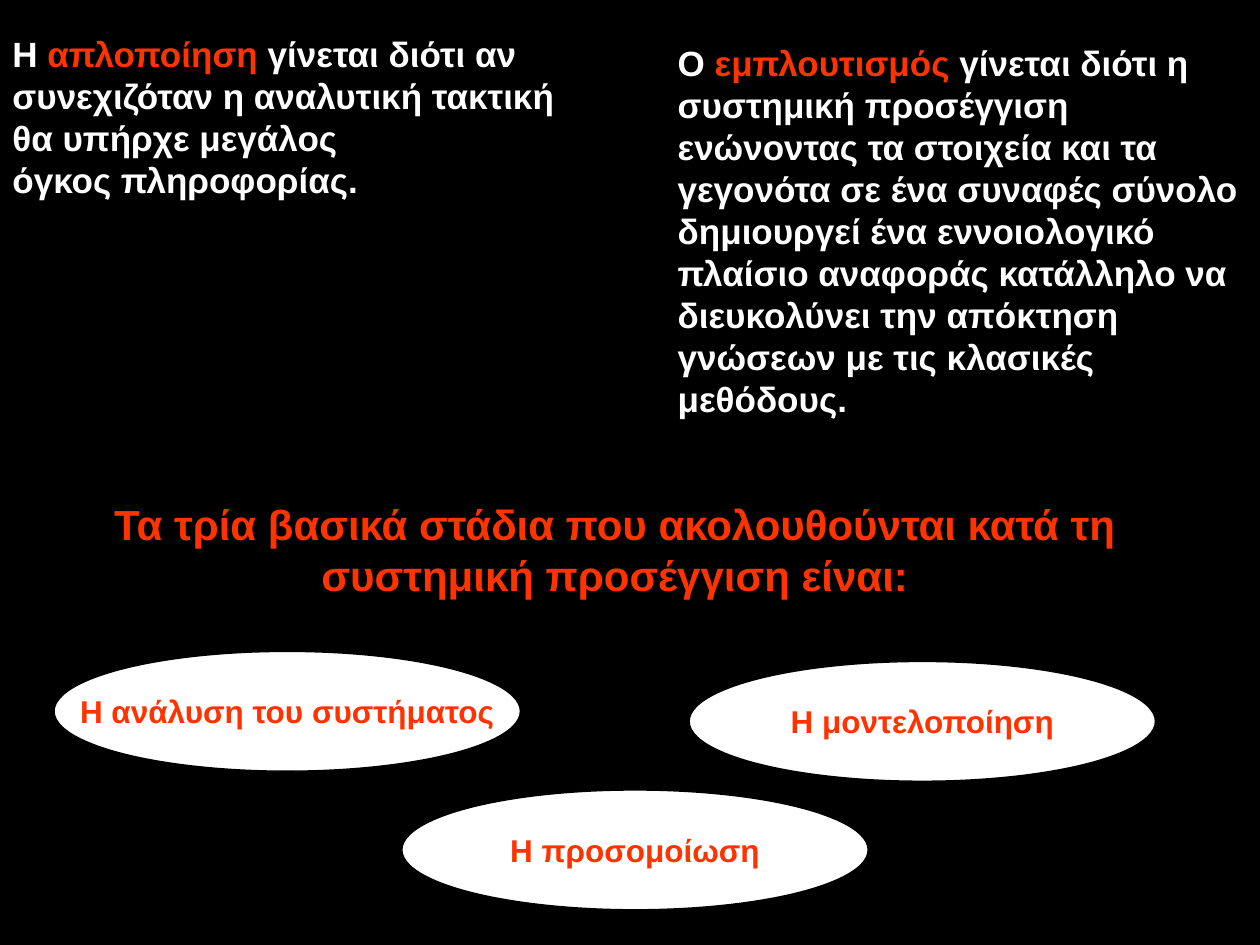
import pptx
import pptx.util
import pptx.dml.color
import pptx.enum.shapes
import pptx.enum.text

Inches = pptx.util.Inches
WHITE, RED, BLACK = "FFFFFF", "FF3300", "000000"

TEXTS = [
    ((0, 0.21, 4.72, 1.43), 20, "LEFT", [
        [("Η ", WHITE), ("απλοποίηση ", RED),
         ("γίνεται διότι αν συνεχιζόταν η αναλυτική τακτική θα υπήρχε μεγάλος", WHITE)],
        [("όγκος πληροφορίας.", WHITE)],
    ]),
    ((5.28, 0.28, 4.72, 3.1), 20, "LEFT", [
        [("Ο ", WHITE), ("εμπλουτισμός", RED),
         (" γίνεται διότι η συστημική προσέγγιση ενώνοντας τα στοιχεία και τα "
          "γεγονότα σε ένα συναφές σύνολο δημιουργεί ένα εννοιολογικό πλαίσιο "
          "αναφοράς κατάλληλο να διευκολύνει την απόκτηση γνώσεων με τις "
          "κλασικές μεθόδους.", WHITE)],
    ]),
    ((0.43, 3.91, 8.9, 0.9), 24, "CENTER", [
        [("Τα τρία βασικά στάδια που ακολουθούνται κατά τη συστημική προσέγγιση είναι:", RED)],
    ]),
]
STAGES = [
    (0.43, 5.17, "Η ανάλυση του συστήματος"),
    (5.47, 5.25, "Η μοντελοποίηση"),
    (3.19, 6.27, "Η προσομοίωση"),
]
STAGE_SIZE = (3.7, 0.95)


def rgb(value):
    return pptx.dml.color.RGBColor.from_string(value)


def write(tf, paragraphs, size, align):
    for i, runs in enumerate(paragraphs):
        p = tf.add_paragraph() if i else tf.paragraphs[0]
        p.alignment = getattr(pptx.enum.text.PP_ALIGN, align)
        for text, color in runs:
            r = p.add_run()
            r.text = text
            r.font.name = "Arial"
            r.font.size = pptx.util.Pt(size)
            r.font.bold = True
            r.font.color.rgb = rgb(color)


prs = pptx.Presentation()
prs.slide_width, prs.slide_height = Inches(10), Inches(7.5)
s = prs.slides.add_slide(prs.slide_layouts[6])
s.background.fill.solid()
s.background.fill.fore_color.rgb = rgb(BLACK)

for box, size, align, paragraphs in TEXTS:
    tf = s.shapes.add_textbox(*map(Inches, box)).text_frame
    tf.word_wrap = True
    tf.auto_size = pptx.enum.text.MSO_AUTO_SIZE.SHAPE_TO_FIT_TEXT
    write(tf, paragraphs, size, align)

for left, top, label in STAGES:
    sp = s.shapes.add_shape(pptx.enum.shapes.MSO_SHAPE.OVAL,
                            *map(Inches, (left, top, *STAGE_SIZE)))
    sp.shadow.inherit = False
    sp.fill.solid()
    sp.fill.fore_color.rgb = rgb(WHITE)
    sp.line.color.rgb = rgb(BLACK)
    sp.line.width = pptx.util.Pt(0.75)
    tf = sp.text_frame
    tf.word_wrap = False
    tf.vertical_anchor = pptx.enum.text.MSO_ANCHOR.MIDDLE
    write(tf, [[(label, RED)]], 18, "CENTER")

prs.save("out.pptx")
